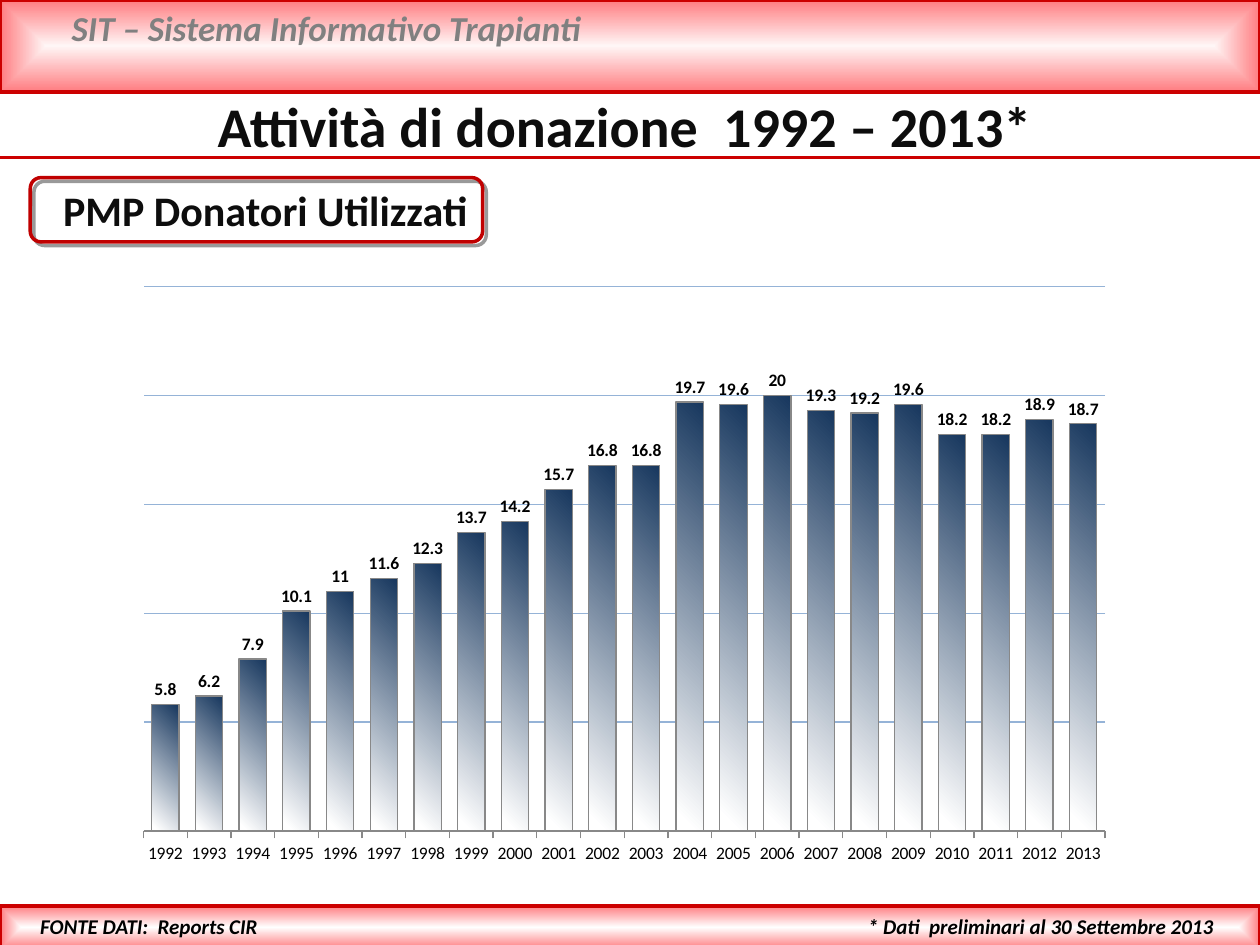
from lxml import etree
from pptx import Presentation
from pptx.chart.data import CategoryChartData
from pptx.dml.color import RGBColor
from pptx.enum.chart import XL_CHART_TYPE, XL_LABEL_POSITION, XL_TICK_LABEL_POSITION, XL_TICK_MARK
from pptx.enum.shapes import MSO_CONNECTOR, MSO_SHAPE
from pptx.enum.text import MSO_ANCHOR, PP_ALIGN
from pptx.oxml import parse_xml
from pptx.oxml.ns import nsdecls, qn
from pptx.util import Inches, Pt

FONT = "Calibri"
RED = "CC0000"
PINK = "FF7C80"
CENTER_PATH = '<a:path path="rect"><a:fillToRect l="50000" t="50000" r="50000" b="50000"/></a:path>'
DIAGONAL = '<a:lin ang="8100000" scaled="0"/>'

FIRST_YEAR = 1992
DONORS_PMP = [5.8, 6.2, 7.9, 10.1, 11, 11.6, 12.3, 13.7, 14.2, 15.7, 16.8,
              16.8, 19.7, 19.6, 20, 19.3, 19.2, 19.6, 18.2, 18.2, 18.9, 18.7]


def color(value):
    return RGBColor.from_string(value)


def set_line(line, value, width):
    line.color.rgb = color(value)
    line.width = Pt(width)


def set_gradient(fill, properties, stops, direction):
    """Fill with (percent, colour) stops; direction is the a:lin or a:path element."""
    fill.gradient()
    old = properties.find(qn("a:gradFill"))
    stop_xml = "".join(
        f'<a:gs pos="{percent * 1000}"><a:srgbClr val="{value}"/></a:gs>'
        for percent, value in stops)
    properties.replace(old, parse_xml(
        f'<a:gradFill {nsdecls("a")} rotWithShape="1">'
        f'<a:gsLst>{stop_xml}</a:gsLst>{direction}</a:gradFill>'))


def write_text(shape, text, size, value="000000", align=PP_ALIGN.LEFT, italic=False):
    frame = shape.text_frame
    frame.text = text
    frame.word_wrap = True
    frame.vertical_anchor = MSO_ANCHOR.MIDDLE
    frame.margin_top = frame.margin_bottom = Inches(0.05)
    paragraph = frame.paragraphs[0]
    paragraph.alignment = align
    font = paragraph.runs[0].font
    font.name, font.size = FONT, Pt(size)
    font.bold, font.italic = True, italic
    font.color.rgb = color(value)


def add_text(slide, box, text, size, **style):
    shape = slide.shapes.add_textbox(*map(Inches, box))
    write_text(shape, text, size, **style)
    return shape


def add_band(slide, box, middle):
    band = slide.shapes.add_shape(MSO_SHAPE.RECTANGLE, *map(Inches, box))
    band.shadow.inherit = False
    set_gradient(band.fill, band._element.spPr, [(0, middle), (100, PINK)], CENTER_PATH)
    set_line(band.line, RED, 2)


def add_header(slide, box):
    left, top, width, height = box
    add_band(slide, box, "FFF6F6")
    add_text(slide, (left + 0.47, top, width - 1.02, 0.44),
             "SIT – Sistema Informativo Trapianti", 20, value="808080", italic=True)


def add_title(slide, box):
    left, top, width, height = box
    title = slide.shapes.title
    title.left, title.top, title.width, title.height = map(Inches, box)
    write_text(title, "Attività di donazione  1992 – 2013*", 32,
               value="0D0D0D", align=PP_ALIGN.CENTER)
    rule_top = Inches(1.25)
    rule = slide.shapes.add_connector(
        MSO_CONNECTOR.STRAIGHT, 0, rule_top, Inches(10), rule_top)
    set_line(rule.line, RED, 2)
    etree.SubElement(rule._element.spPr, qn("a:effectLst"))


def add_subtitle(slide, box):
    left, top, width, height = box
    frame = slide.shapes.add_shape(MSO_SHAPE.ROUNDED_RECTANGLE, *map(Inches, box))
    frame.fill.background()
    set_line(frame.line, "C00000", 2)
    frame._element.spPr.append(parse_xml(
        f'<a:effectLst {nsdecls("a")}>'
        '<a:outerShdw dist="38100" dir="2700000" algn="tl" rotWithShape="0">'
        '<a:srgbClr val="000000"><a:alpha val="40000"/></a:srgbClr>'
        '</a:outerShdw></a:effectLst>'))
    label = add_text(slide, (left, top, width + 0.06, height),
                     "PMP Donatori Utilizzati", 24, value="0D0D0D")
    label.text_frame.margin_left = Inches(0.26)
    label.text_frame.margin_right = 0


def add_donor_chart(slide, box):
    data = CategoryChartData()
    data.categories = [str(FIRST_YEAR + i) for i in range(len(DONORS_PMP))]
    data.add_series("Series 1", DONORS_PMP)
    chart = slide.shapes.add_chart(
        XL_CHART_TYPE.COLUMN_CLUSTERED, *map(Inches, box), data).chart
    chart.has_legend = chart.has_title = False
    chart.font.name, chart.font.size = FONT, Pt(10)
    chart.font.color.rgb = color("000000")

    value_axis = chart.value_axis
    value_axis.minimum_scale, value_axis.maximum_scale = 0, 25
    value_axis.major_unit = 5
    value_axis.major_tick_mark = XL_TICK_MARK.NONE
    value_axis.tick_label_position = XL_TICK_LABEL_POSITION.NONE
    value_axis.format.line.fill.background()
    set_line(value_axis.major_gridlines.format.line, "95B3D7", 0.75)
    category_axis = chart.category_axis
    category_axis.major_tick_mark = XL_TICK_MARK.OUTSIDE
    set_line(category_axis.format.line, "888888", 0.75)

    plot = chart.plots[0]
    plot.gap_width, plot.overlap = 60, -20
    plot.vary_by_categories = False
    series = plot.series[0]
    series.invert_if_negative = False
    set_gradient(series.format.fill, series._element.spPr,
                 [(0, "17375E"), (96, "FFFFFF")], DIAGONAL)
    set_line(series.format.line, "888888", 0.75)
    labels = series.data_labels
    labels.show_value = True
    labels.position = XL_LABEL_POSITION.OUTSIDE_END
    labels.font.name, labels.font.size, labels.font.bold = FONT, Pt(10), True
    labels.font.color.rgb = color("000000")

    plot_area = chart._chartSpace.chart.plotArea
    for layout in plot_area.findall(qn("c:layout")):
        plot_area.remove(layout)
    plot_area.insert(0, parse_xml(
        f'<c:layout {nsdecls("c")}><c:manualLayout><c:layoutTarget val="inner"/>'
        '<c:xMode val="edge"/><c:yMode val="edge"/><c:x val="0.02"/><c:y val="0.02"/>'
        '<c:w val="0.96"/><c:h val="0.9"/></c:manualLayout></c:layout>'))


def add_footer(slide, box):
    left, top, width, height = box
    add_band(slide, box, "FFFFFF")
    for offset, note_width, text in (
            (0.22, 2.2, "FONTE DATI:  Reports CIR"),
            (6.79, 3.21, "* Dati  preliminari al 30 Settembre 2013")):
        add_text(slide, (left + offset, top + 0.01, note_width, 0.3), text, 12, italic=True)


def main():
    presentation = Presentation()
    presentation.slide_width, presentation.slide_height = Inches(10), Inches(7.5)
    slide = presentation.slides.add_slide(presentation.slide_layouts[5])
    add_header(slide, (0, 0, 10, 0.73))
    add_title(slide, (0, 0.67, 9.92, 0.64))
    add_subtitle(slide, (0.24, 1.41, 3.59, 0.51))
    add_donor_chart(slide, (0.98, 2.18, 7.95, 4.8))
    add_footer(slide, (0, 7.19, 10, 0.34))
    presentation.save("out.pptx")


if __name__ == "__main__":
    main()
